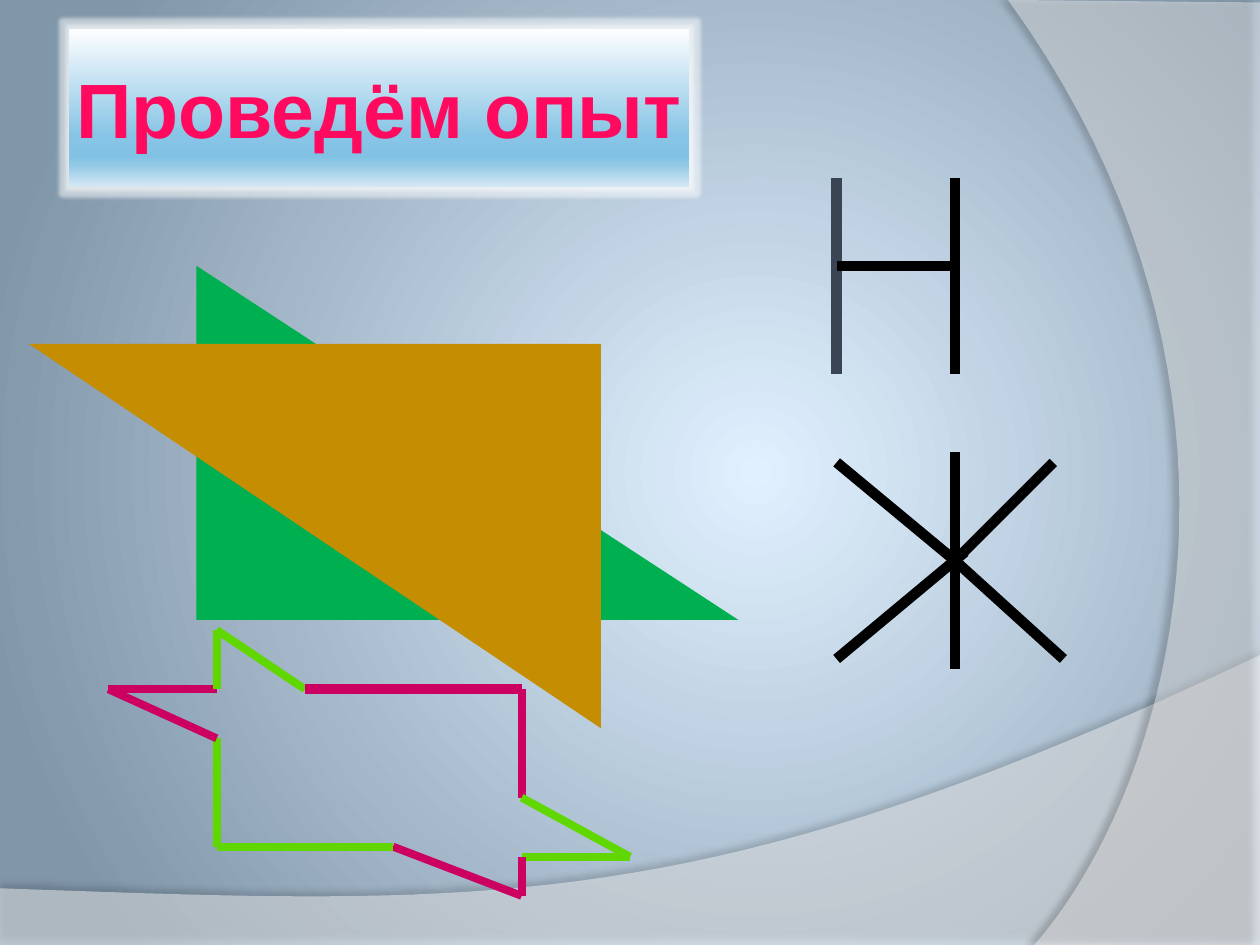
from lxml.etree import SubElement
from pptx import Presentation
from pptx.dml.color import RGBColor
from pptx.enum.shapes import MSO_CONNECTOR, MSO_SHAPE
from pptx.enum.text import MSO_ANCHOR, PP_ALIGN
from pptx.oxml.ns import qn
from pptx.util import Inches, Pt

BLACK, SLATE = "000000", "3B4453"
LIME, CRIMSON = "61D700", "CC0061"
BACKDROP = [(0, "E0F0FF"), (100, "8096A9")]
BANNER = [(0, "FEFEFF"), (68, "87C4E5"), (81, "81C2E4"),
          (86, "90C8E6"), (100, "D3E7F3")]

LETTER_STROKES = [
    ((6.64, 1.41), (6.64, 2.97), SLATE),
    ((6.64, 2.11), (7.58, 2.11), BLACK),
    ((7.58, 1.41), (7.58, 2.97), BLACK),
    ((7.58, 3.59), (7.58, 5.31), BLACK),
    ((6.64, 3.67), (7.58, 4.45), BLACK),
    ((7.58, 4.45), (8.36, 3.67), BLACK),
    ((7.66, 4.38), (6.64, 5.23), BLACK),
    ((7.58, 4.45), (8.44, 5.23), BLACK),
]
STAR_START = (0.86, 5.47)
STAR_SIDES = [
    ((1.72, 5.47), CRIMSON, 4.5),
    ((1.72, 5), LIME, 4.5),
    ((2.42, 5.47), LIME, 4.5),
    ((4.14, 5.47), CRIMSON, 6),
    ((4.14, 6.33), CRIMSON, 4.5),
    ((5, 6.8), LIME, 4.5),
    ((4.14, 6.8), LIME, 4.5),
    ((4.14, 7.11), CRIMSON, 4.5),
    ((3.12, 6.72), CRIMSON, 4.5),
    ((1.72, 6.72), LIME, 4.5),
    ((1.72, 5.86), LIME, 4.5),
    (STAR_START, CRIMSON, 4.5),
]


def color(hex_value):
    return RGBColor.from_string(hex_value)


def add_color(parent, hex_value, alpha=100):
    tint = SubElement(parent, qn("a:srgbClr"), val=hex_value)
    if alpha < 100:
        SubElement(tint, qn("a:alpha"), val=str(alpha * 1000))


def set_gradient(fill, owner, stops, center=None):
    fill.gradient()
    gradient = next(owner.iter(qn("a:gradFill")))
    for child in list(gradient):
        gradient.remove(child)
    stop_list = SubElement(gradient, qn("a:gsLst"))
    for position, hex_value in stops:
        stop = SubElement(stop_list, qn("a:gs"), pos=str(position * 1000))
        add_color(stop, hex_value)
    if center:
        x, y = center
        radial = SubElement(gradient, qn("a:path"))
        radial.set("path", "circle")
        SubElement(radial, qn("a:fillToRect"), l=str(x * 1000), t=str(y * 1000),
                   r=str((100 - x) * 1000), b=str((100 - y) * 1000))
    else:
        SubElement(gradient, qn("a:lin"), ang="5400000", scaled="0")


def add_effect(shape, kind, hex_value, alpha, **settings):
    shape.shadow.inherit = False
    effects = shape._element.spPr.find(qn("a:effectLst"))
    effect = SubElement(effects, qn(f"a:{kind}"),
                        {name: str(value) for name, value in settings.items()})
    add_color(effect, hex_value, alpha)


def curve(start, first, second, end, steps=40):
    points = []
    for step in range(steps + 1):
        t = step / steps
        weights = ((1 - t) ** 3, 3 * t * (1 - t) ** 2, 3 * t * t * (1 - t), t ** 3)
        points.append(tuple(sum(w * p[axis] for w, p in
                                zip(weights, (start, first, second, end)))
                            for axis in (0, 1)))
    return points


def paint(shape, hex_value, alpha=100):
    shape.shadow.inherit = False
    shape.line.fill.background()
    shape.fill.solid()
    shape.fill.fore_color.rgb = color(hex_value)
    if alpha < 100:
        tint = shape._element.spPr.find(qn("a:solidFill"))[0]
        SubElement(tint, qn("a:alpha"), val=str(alpha * 1000))


def add_polygon(slide, points, hex_value, alpha=100):
    corners = [(Inches(x), Inches(y)) for x, y in points]
    builder = slide.shapes.build_freeform(*corners[0], scale=1.0)
    builder.add_line_segments(corners[1:], close=True)
    polygon = builder.convert_to_shape()
    paint(polygon, hex_value, alpha)
    return polygon


def add_wave(slide, points, alpha, shade, distance, angle):
    wave = add_polygon(slide, points, "FFFFFF", alpha)
    add_effect(wave, "outerShdw", BLACK, shade, blurRad=Pt(4),
               dist=Pt(distance), dir=angle * 60000, rotWithShape=0)


def add_stroke(slide, start, end, hex_value, width):
    stroke = slide.shapes.add_connector(
        MSO_CONNECTOR.STRAIGHT, *(Inches(value) for value in start + end))
    stroke.line.color.rgb = color(hex_value)
    stroke.line.width = Pt(width)
    SubElement(stroke._element.spPr, qn("a:effectLst"))


def write_text(shape, text, *, size, font, hex_value, bold=False):
    frame = shape.text_frame
    frame.word_wrap = False
    frame.vertical_anchor = MSO_ANCHOR.MIDDLE
    frame.margin_left = frame.margin_right = Inches(0.05)
    frame.margin_top = frame.margin_bottom = Inches(0.05)
    paragraph = frame.paragraphs[0]
    paragraph.alignment = PP_ALIGN.CENTER
    run = paragraph.add_run()
    run.text = text
    run.font.size = Pt(size)
    run.font.name = font
    run.font.bold = bold
    run.font.color.rgb = color(hex_value)


def add_title(slide):
    banner = slide.shapes.add_shape(MSO_SHAPE.RECTANGLE, Inches(0.55), Inches(0.23),
                                    Inches(4.92), Inches(1.25))
    banner.line.fill.background()
    set_gradient(banner.fill, banner._element.spPr, BANNER)
    add_effect(banner, "glow", "FFFFFF", 50, rad=Pt(4))
    write_text(banner, "Проведём опыт", size=44, font="Arial",
               hex_value="FF0A5E", bold=True)


def add_triangles(slide):
    green = slide.shapes.add_shape(MSO_SHAPE.RIGHT_TRIANGLE, Inches(1.56), Inches(2.11),
                                   Inches(4.3), Inches(2.81))
    paint(green, "00B050")
    add_polygon(slide, [(4.77, 2.73), (4.77, 5.78), (0.23, 2.73)], "C58D01")


def add_star(slide):
    start = STAR_START
    for end, hex_value, width in STAR_SIDES:
        add_stroke(slide, start, end, hex_value, width)
        start = end


def main():
    deck = Presentation()
    deck.slide_width, deck.slide_height = Inches(10), Inches(7.5)
    slide = deck.slides.add_slide(deck.slide_layouts[6])
    set_gradient(slide.background.fill, slide._element, BACKDROP, center=(60, 50))

    bottom_edge = curve((10, 5.2), (5.59, 7.29), (3.91, 7.19), (0, 7.05))
    right_edge = curve((8.21, 7.5), (9.35, 6.19), (10.18, 3), (8, 0))
    add_wave(slide, [(0, 7.5), (10, 7.5)] + bottom_edge, 45, 35, 3.5, 270)
    add_wave(slide, [(10, 0.02), (10, 7.5)] + right_edge, 40, 45, 4, 180)

    add_title(slide)
    add_triangles(slide)
    for start, end, hex_value in LETTER_STROKES:
        add_stroke(slide, start, end, hex_value, 6)
    add_star(slide)
    deck.save("out.pptx")


if __name__ == "__main__":
    main()
